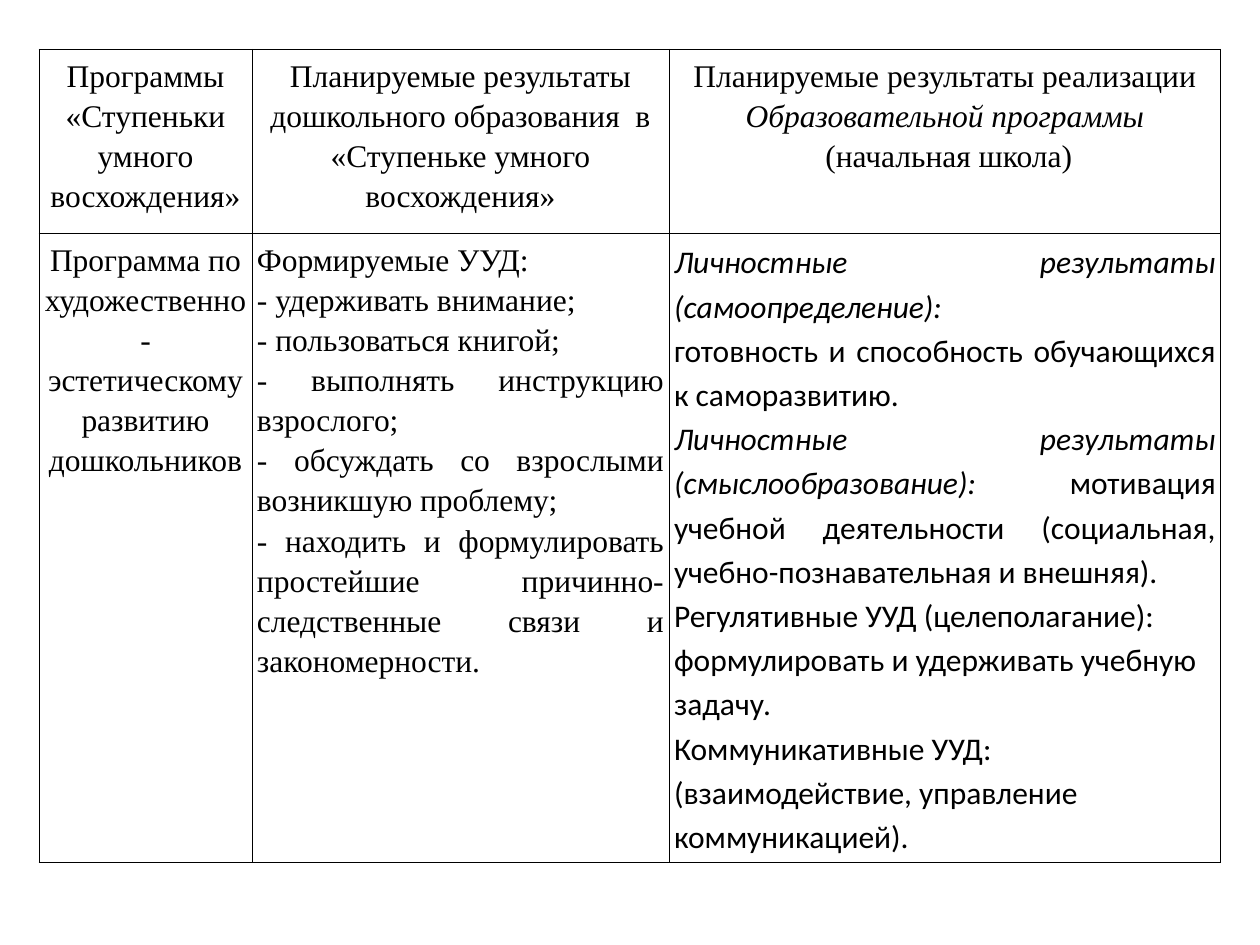
import pptx
import pptx.util
import pptx.dml.color
import pptx.enum.text
import pptx.oxml
import pptx.oxml.ns

ALIGN = pptx.enum.text.PP_ALIGN
SERIF, SANS = "Times New Roman", "Calibri"
COLUMN_WIDTHS = [1.69, 3.31, 4.38]
ROW_HEIGHTS = [1.46, 4.9]

PROGRAM_HEADING = [(ALIGN.CENTER, [("Программы «Ступеньки умного восхождения»", False)])]
PRESCHOOL_HEADING = [(ALIGN.CENTER, [
    ("Планируемые результаты дошкольного образования  в «Ступеньке умного восхождения»", False)])]
SCHOOL_HEADING = [
    (ALIGN.CENTER, [("Планируемые результаты реализации ", False),
                    ("Образовательной программы", True)]),
    (ALIGN.CENTER, [(" (начальная школа)", False)]),
]
PROGRAM = [(ALIGN.CENTER, [
    ("Программа по художественно-эстетическому развитию дошкольников", False)])]
PRESCHOOL_RESULTS = [(ALIGN.JUSTIFY, [(line, False)]) for line in (
    "Формируемые УУД:",
    "- удерживать внимание;",
    "- пользоваться книгой;",
    "- выполнять инструкцию взрослого;",
    "- обсуждать со взрослыми возникшую проблему;",
    "- находить и формулировать простейшие причинно-следственные связи и закономерности.",
)]
SCHOOL_RESULTS = [
    (ALIGN.JUSTIFY, [("Личностные результаты (самоопределение): ", True)]),
    (ALIGN.JUSTIFY, [("готовность и способность обучающихся к саморазвитию.", False)]),
    (ALIGN.JUSTIFY, [
        ("Личностные результаты (смыслообразование): ", True),
        (" мотивация учебной деятельности (социальная, учебно-познавательная и внешняя).", False)]),
    (ALIGN.LEFT, [
        ("Регулятивные УУД (целеполагание): формулировать и удерживать учебную задачу.", False)]),
    (ALIGN.LEFT, [
        ("Коммуникативные УУД: (взаимодействие, управление коммуникацией).", False)]),
]
CONTENT = [
    [(PROGRAM_HEADING, SERIF), (PRESCHOOL_HEADING, SERIF), (SCHOOL_HEADING, SERIF)],
    [(PROGRAM, SERIF), (PRESCHOOL_RESULTS, SERIF), (SCHOOL_RESULTS, SANS)],
]


def colour(value):
    return pptx.dml.color.RGBColor.from_string(value)


def apply_format(target, values):
    for name, value in values.items():
        setattr(target, name, value)


def add_borders(cell, value, points):
    properties = cell._tc.get_or_add_tcPr()
    for index, side in enumerate("LRTB"):
        properties.insert(index, pptx.oxml.parse_xml(
            f'<a:ln{side} {pptx.oxml.ns.nsdecls("a")} w="{pptx.util.Pt(points)}">'
            f'<a:solidFill><a:srgbClr val="{value}"/></a:solidFill></a:ln{side}>'))


def fill_cell(cell, paragraphs, font_name):
    margin = pptx.util.Inches(0.04)
    apply_format(cell, {f"margin_{side}": margin for side in ("left", "right", "top", "bottom")})
    cell.fill.background()
    add_borders(cell, "000000", 0.5)
    for index, (alignment, spans) in enumerate(paragraphs):
        para = cell.text_frame.add_paragraph() if index else cell.text_frame.paragraphs[0]
        apply_format(para, {"alignment": alignment, "line_spacing": 1.15})
        for text, italic in spans:
            span = para.add_run()
            span.text = text
            apply_format(span.font, {"name": font_name, "size": pptx.util.Pt(18),
                                     "bold": False, "italic": italic})
            span.font.color.rgb = colour("000000")


def add_results_table(page, left, top, widths, heights):
    box = [pptx.util.Inches(value) for value in (left, top, sum(widths), sum(heights))]
    table = page.shapes.add_table(len(heights), len(widths), *box).table
    apply_format(table, {"first_row": False, "horz_banding": False})
    for column, width in zip(table.columns, widths):
        column.width = pptx.util.Inches(width)
    for row, height, contents in zip(table.rows, heights, CONTENT):
        row.height = pptx.util.Inches(height)
        for cell, (paragraphs, font_name) in zip(row.cells, contents):
            fill_cell(cell, paragraphs, font_name)


def main():
    deck = pptx.Presentation()
    apply_format(deck, {"slide_width": pptx.util.Inches(10),
                        "slide_height": pptx.util.Inches(7.5)})
    page = deck.slides.add_slide(deck.slide_layouts[6])
    page.background.fill.solid()
    page.background.fill.fore_color.rgb = colour("FFFFFF")
    add_results_table(page, 0.31, 0.39, COLUMN_WIDTHS, ROW_HEIGHTS)
    deck.save("out.pptx")


if __name__ == "__main__":
    main()
